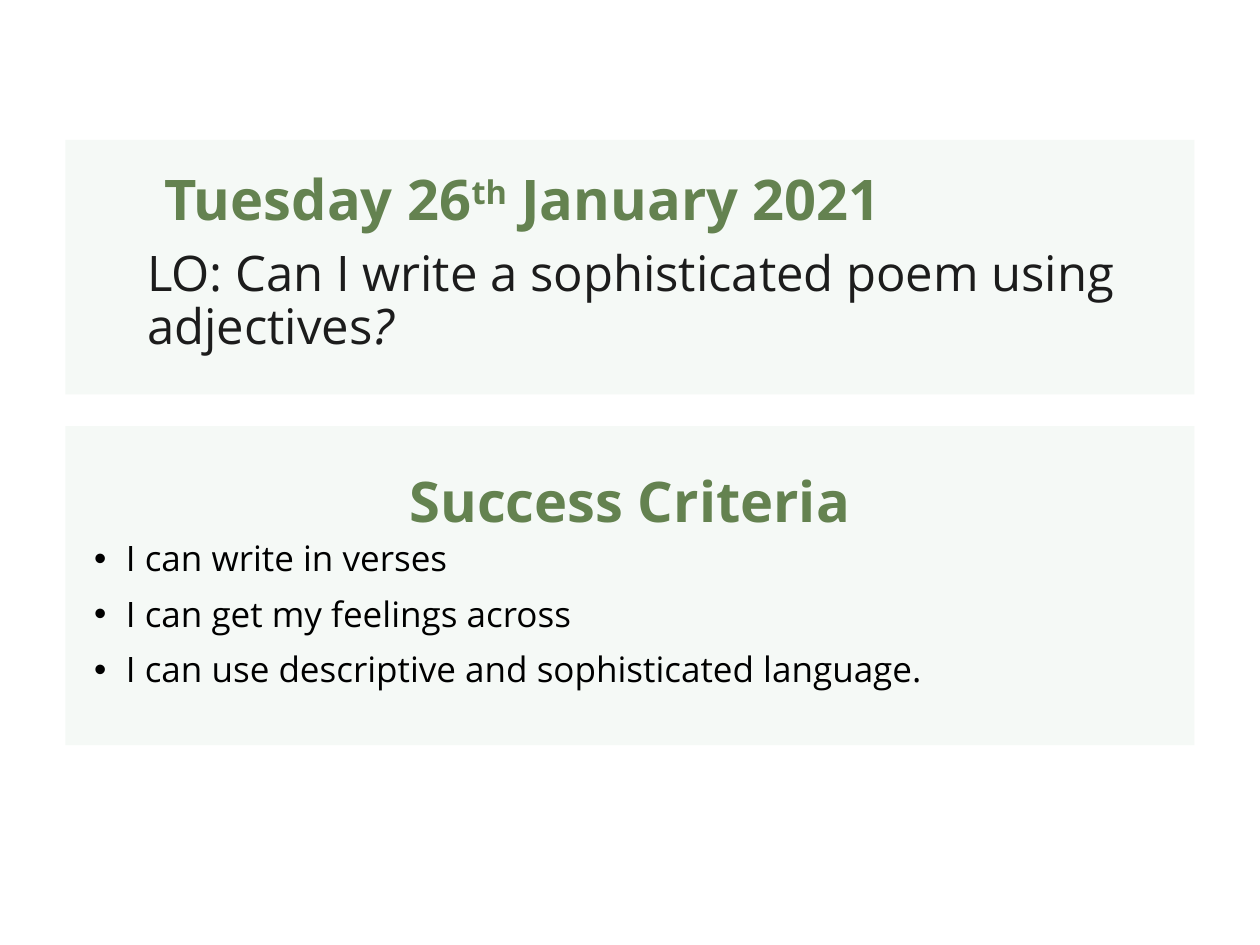
from lxml.etree import SubElement
from pptx import Presentation
from pptx.dml.color import RGBColor
from pptx.enum.shapes import MSO_SHAPE
from pptx.enum.text import MSO_ANCHOR, MSO_AUTO_SIZE as AutoSize, PP_ALIGN
from pptx.oxml.ns import qn
from pptx.util import Cm, Pt

COLORS = {
    "panel": "F5F9F6",
    "heading": "648250",
    "objective": "1C1C1C",
    "criteria": "000000",
}
PANEL_LEFT, PANEL_WIDTH = 1.32, 22.76
HEADING_HEIGHT = 1.93
HEADING_INSETS = (0.71, 0.61, 0.71, 0.51)


def rgb(name):
    return RGBColor.from_string(COLORS[name])


def add_text(paragraph, text, font="Open Sans", size=20, color="criteria",
             bold=False, italic=False, baseline=0):
    run = paragraph.add_run()
    run.text = text
    run.font.name = font
    run.font.size = Pt(size)
    run.font.color.rgb = rgb(color)
    run.font.bold = bold
    run.font.italic = italic
    if baseline:
        run._r.get_or_add_rPr().set("baseline", str(baseline * 1000))


class LessonSlide:
    line_spacing = 0.9
    space_before = Pt(10)
    bullet_indent = Cm(0.64)

    def __init__(self, slide):
        self.slide = slide

    def panel(self, top, height):
        shape = self.slide.shapes.add_shape(
            MSO_SHAPE.ROUNDED_RECTANGLE,
            Cm(PANEL_LEFT), Cm(top), Cm(PANEL_WIDTH), Cm(height))
        shape.adjustments[0] = 0
        shape.shadow.inherit = False
        shape.fill.solid()
        shape.fill.fore_color.rgb = rgb("panel")
        shape.line.fill.background()
        color = shape._element.spPr.find(qn("a:solidFill"))[0]
        SubElement(color, qn("a:alpha"), val="95000")

    def text_box(self, left, top, width, height, paragraphs,
                 insets=(0, 0, 0, 0), align=PP_ALIGN.LEFT, bullet=None,
                 auto_size=AutoSize.SHAPE_TO_FIT_TEXT, **style):
        shape = self.slide.shapes.add_textbox(
            Cm(left), Cm(top), Cm(width), Cm(height))
        frame = shape.text_frame
        frame.word_wrap = True
        frame.auto_size = auto_size
        frame.vertical_anchor = MSO_ANCHOR.TOP
        (frame.margin_left, frame.margin_top,
         frame.margin_right, frame.margin_bottom) = map(Cm, insets)
        for index, runs in enumerate(paragraphs):
            paragraph = frame.add_paragraph() if index else frame.paragraphs[0]
            paragraph.alignment = align
            paragraph.line_spacing = self.line_spacing
            paragraph.space_before = self.space_before if index else Pt(0)
            if bullet:
                self.bullet(paragraph, bullet)
            for text, changes in runs:
                add_text(paragraph, text, **style, **changes)

    def bullet(self, paragraph, character):
        properties = paragraph._p.get_or_add_pPr()
        properties.set("marL", str(self.bullet_indent))
        properties.set("indent", str(-self.bullet_indent))
        SubElement(properties, qn("a:buFont"), typeface="Arial")
        SubElement(properties, qn("a:buChar"), char=character)

    def heading(self, left, top, runs):
        self.text_box(left, top, PANEL_WIDTH, HEADING_HEIGHT, [runs],
                      insets=HEADING_INSETS, align=PP_ALIGN.CENTER,
                      auto_size=AutoSize.NONE,
                      size=32, color="heading", bold=True)


def main():
    presentation = Presentation()
    presentation.slide_width = Cm(25.4)
    presentation.slide_height = Cm(19.05)
    lesson = LessonSlide(
        presentation.slides.add_slide(presentation.slide_layouts[6]))

    lesson.panel(2.82, 5.13)
    lesson.panel(8.59, 6.43)

    criteria = [
        "I can write in verses",
        "I can get my feelings across",
        "I can use descriptive and sophisticated language.",
    ]
    lesson.text_box(1.9, 10.92, 21.59, 3.02,
                    [[(text, {})] for text in criteria], bullet="•")

    objective = [
        ("LO: Can I write a sophisticated poem using adjectives", {}),
        ("?", {"italic": True}),
    ]
    lesson.text_box(2.97, 5.03, 20.07, 2.16, [objective],
                    size=28, color="objective")

    lesson.heading(-0.84, 2.87, [
        ("Tuesday 26", {}),
        ("th", {"baseline": 30}),
        (" January 2021", {}),
    ])
    lesson.heading(PANEL_LEFT, 8.94, [("Success Criteria", {})])

    presentation.save("out.pptx")


if __name__ == "__main__":
    main()
